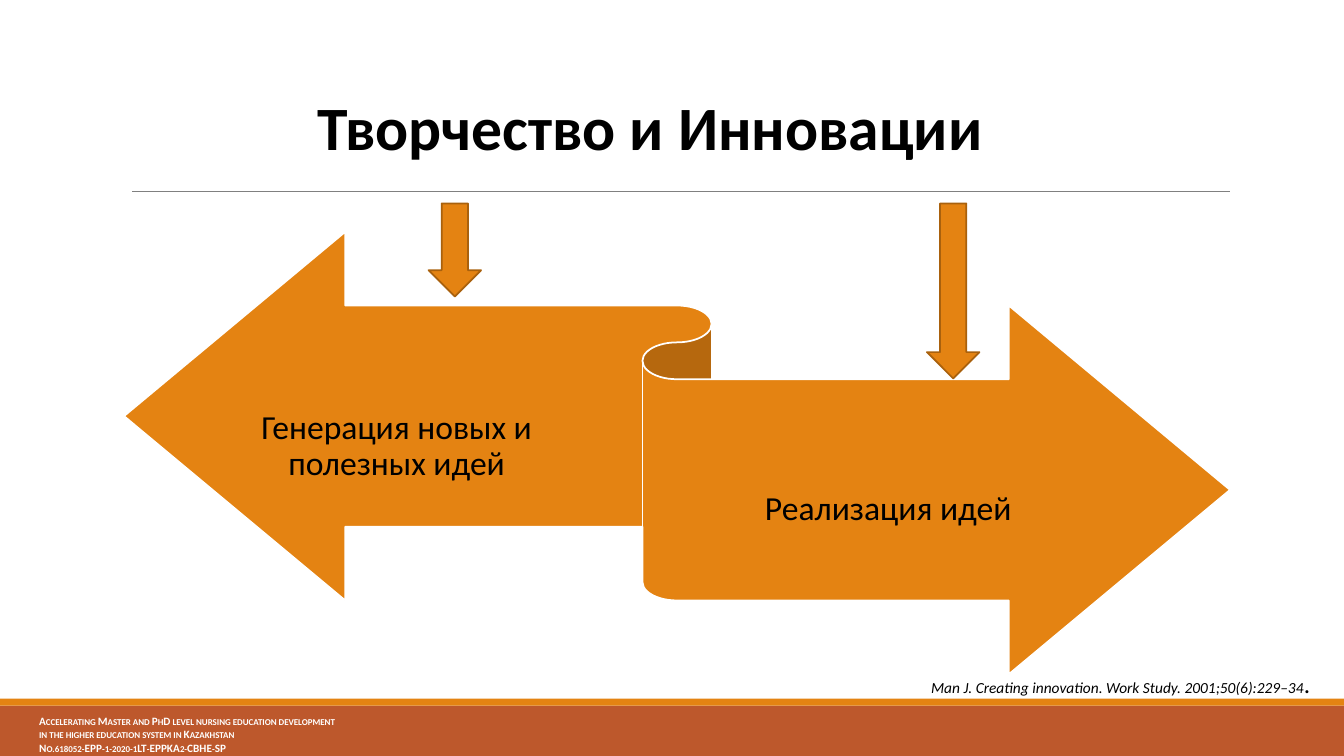
from lxml.etree import SubElement
from pptx import Presentation
from pptx.dml.color import RGBColor
from pptx.enum.shapes import MSO_CONNECTOR, MSO_SHAPE
from pptx.enum.text import MSO_ANCHOR, PP_ALIGN
from pptx.oxml.ns import qn
from pptx.util import Pt

WIDTH, HEIGHT = 960, 540
ORANGE, RUST, BROWN = "E48312", "BD582C", "A9610D"
BLACK, WHITE, GREY = "000000", "FFFFFF", "808080"


def color(hex_string):
    return RGBColor.from_string(hex_string)


def add_filled(page, kind, left, top, width, height, fill, line=None):
    shape = page.shapes.add_shape(kind, Pt(left), Pt(top), Pt(width), Pt(height))
    shape.shadow.inherit = False
    shape.fill.solid()
    shape.fill.fore_color.rgb = color(fill)
    if line:
        shape.line.color.rgb = color(line)
        shape.line.width = Pt(1.25)
    else:
        shape.line.fill.background()
    return shape


def add_text(page, left, top, width, height, text, size, ink,
             align=PP_ALIGN.LEFT, anchor=MSO_ANCHOR.TOP, spacing=1.0, bold=False, side_inset=7.2):
    """Add a wrapped text box, one paragraph per line of text."""
    box = page.shapes.add_textbox(Pt(left), Pt(top), Pt(width), Pt(height))
    frame = box.text_frame
    frame.word_wrap = True
    frame.vertical_anchor = anchor
    frame.margin_left = frame.margin_right = Pt(side_inset)
    frame.text = text
    for para in frame.paragraphs:
        para.alignment = align
        para.line_spacing = spacing
        for span in para.runs:
            span.font.name = "Calibri"
            span.font.size = Pt(size)
            span.font.bold = bold
            span.font.color.rgb = color(ink)
    return box


def add_footer(page, left, top, width, height):
    stripe = 5
    add_filled(page, MSO_SHAPE.RECTANGLE, left, top + stripe, width, height - stripe, RUST)
    add_filled(page, MSO_SHAPE.RECTANGLE, left, top, width, stripe, ORANGE)
    project = add_text(
        page, left + 20.9, top + 7.5, 330, 36,
        "Accelerating Master and PhD level nursing education development\n"
        "in the higher education system in Kazakhstan\n"
        "No.618052-EPP-1-2020-1LT-EPPKA2-CBHE-SP", 8, WHITE, bold=True)
    for para in project.text_frame.paragraphs:
        for span in para.runs:
            span.font._element.set("cap", "small")


def add_heading(page, left, top, width, height):
    add_text(page, left, top, width, height, "Творчество и Инновации", 44, BLACK,
             PP_ALIGN.CENTER, MSO_ANCHOR.BOTTOM, 0.85, bold=True)
    rule_top = top + height + 16.5
    rule = page.shapes.add_connector(MSO_CONNECTOR.STRAIGHT, Pt(left + 73.5), Pt(rule_top),
                                     Pt(left + 858), Pt(rule_top))
    rule.line.color.rgb = color(GREY)
    rule.line.width = Pt(0.5)
    SubElement(rule._element.spPr, qn("a:effectLst"))


def add_ribbon(page, left, top, width, height):
    """Add the two-way ribbon, its labels and the arrows that point at its halves."""
    add_filled(page, MSO_SHAPE.LEFT_RIGHT_RIBBON, left, top, width, height, ORANGE, WHITE)
    halves = [
        ("Генерация новых и полезных идей", 0.077, 0.24, 0.339, 217.5, 66.5),
        ("Реализация идей", 0.496, 0.383, 0.39, 573.5, 125),
    ]
    for label, across, down, share, arrow_offset, arrow_height in halves:
        add_text(page, left + across * width, top + down * height, share * width, 0.49 * height,
                 label, 24, BLACK, PP_ALIGN.CENTER, MSO_ANCHOR.MIDDLE, 0.9, side_inset=0)
        add_filled(page, MSO_SHAPE.DOWN_ARROW, left + arrow_offset, top - 20.3, 37.5,
                   arrow_height, ORANGE, BROWN)


def add_citation(page, left, top, width, height):
    box = add_text(page, left, top, width, height,
                   "Man J. Creating innovation. Work Study. 2001;50(6):229–34", 11, BLACK)
    box.text_frame.margin_right = 0
    para = box.text_frame.paragraphs[0]
    stop = para.add_run()
    stop.text = "."
    stop.font.name = "Calibri"
    stop.font.size = Pt(18)
    stop.font.color.rgb = color(BLACK)
    for span in para.runs:
        span.font.italic = True


def main():
    deck = Presentation()
    deck.slide_width, deck.slide_height = Pt(WIDTH), Pt(HEIGHT)
    page = deck.slides.add_slide(deck.slide_layouts[6])
    add_footer(page, 0, 499, WIDTH, HEIGHT - 499)
    add_heading(page, 20.9, 36.7, 887.8, 83.5)
    add_ribbon(page, 88.6, 165.6, 790, 316)
    add_citation(page, 658, 473.8, 288.5, 28.8)
    deck.save("out.pptx")


if __name__ == "__main__":
    main()
